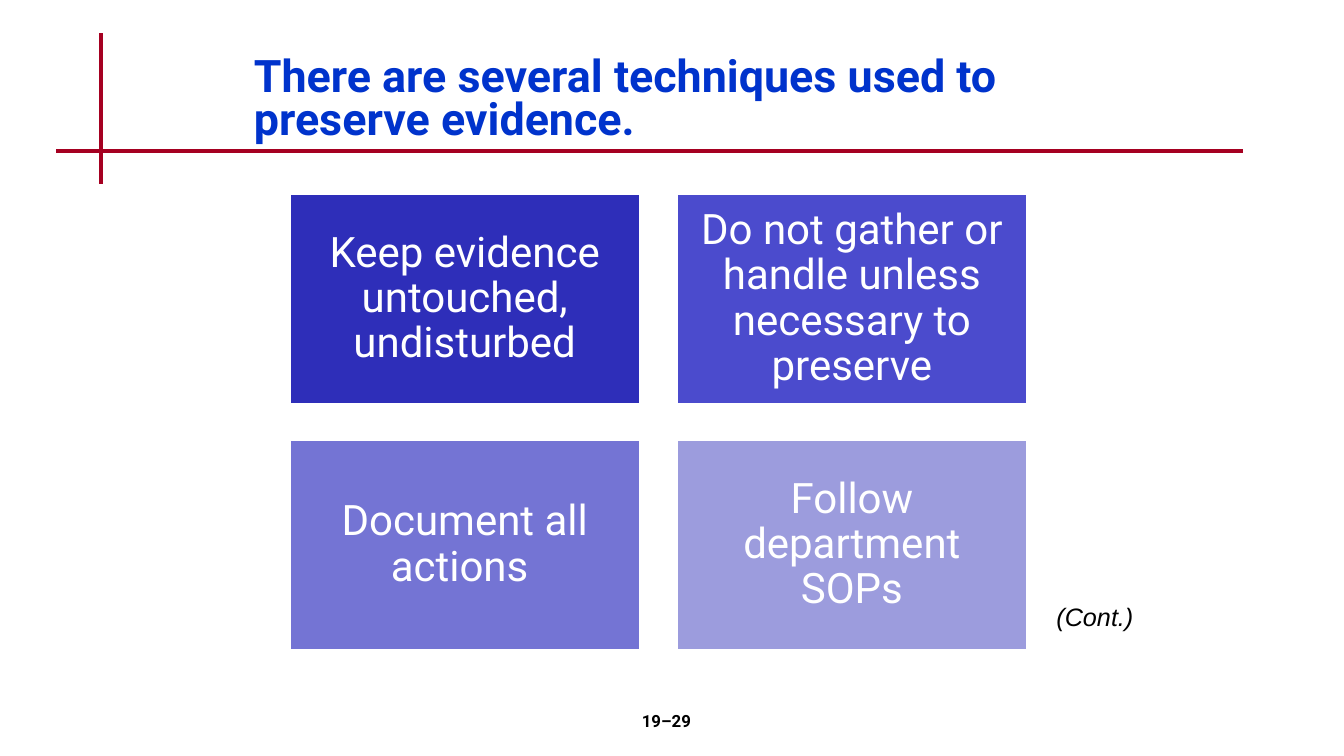
from dataclasses import dataclass

from lxml import etree
from pptx import Presentation
from pptx.dml.color import RGBColor
from pptx.enum import shapes, text
from pptx.oxml import ns
from pptx.util import Inches, Pt


@dataclass(frozen=True)
class Theme:
    heading_font: str = "Roboto"
    note_font: str = "Arial"
    title_color: str = "0033CC"
    rule_color: str = "A50021"
    ink: str = "000000"
    white: str = "FFFFFF"
    title_size: int = 32
    card_size: int = 30
    note_size: int = 18
    number_size: int = 12
    rule_width: int = 3
    card_border: int = 2


@dataclass(frozen=True)
class Box:
    left: float
    top: float
    width: float
    height: float

    def lengths(self) -> list:
        return [Inches(v) for v in (self.left, self.top, self.width, self.height)]


@dataclass(frozen=True)
class Card:
    wording: str
    fill: str


@dataclass(frozen=True)
class Rule:
    start: tuple[float, float]
    end: tuple[float, float]


THEME = Theme()
RULES = [Rule((1, 0.33), (1, 1.83)), Rule((0.56, 1.5), (12.33, 1.5))]
CARDS = [
    Card("Keep evidence untouched, undisturbed", "2E2EB9"),
    Card("Do not gather or handle unless necessary to preserve", "4B4BCD"),
    Card("Document all actions ", "7474D4"),
    Card("Follow department SOPs", "9C9CDD"),
]
FIRST_CARD = Box(2.87, 1.92, 3.48, 2.09)
COLUMNS = 2
COLUMN_STEP = 3.84
ROW_STEP = 2.44


def write(shape, wording: str, *, size: int, color: str, font: str = THEME.heading_font,
          bold: bool = False, italic: bool = False, align=text.PP_ALIGN.LEFT,
          anchor=text.MSO_ANCHOR.TOP, spacing: float = 1.0,
          inset: float | None = None) -> None:
    frame = shape.text_frame
    frame.word_wrap = True
    frame.vertical_anchor = anchor
    if inset is not None:
        frame.margin_left = frame.margin_right = Inches(inset)
        frame.margin_top = frame.margin_bottom = Inches(inset)
    paragraph = frame.paragraphs[0]
    paragraph.alignment = align
    paragraph.line_spacing = spacing
    run = paragraph.add_run()
    run.text = wording
    run.font.name = font
    run.font.size = Pt(size)
    run.font.bold = bold
    run.font.italic = italic
    run.font.color.rgb = RGBColor.from_string(color)


def draw_rule(slide, rule: Rule) -> None:
    connector = slide.shapes.add_connector(
        shapes.MSO_CONNECTOR.STRAIGHT,
        *(Inches(v) for v in (*rule.start, *rule.end)))
    connector.line.color.rgb = RGBColor.from_string(THEME.rule_color)
    connector.line.width = Pt(THEME.rule_width)
    etree.SubElement(connector.element.spPr, ns.qn("a:effectLst"))


def draw_card(slide, card: Card, box: Box) -> None:
    shape = slide.shapes.add_shape(shapes.MSO_SHAPE.RECTANGLE, *box.lengths())
    shape.shadow.inherit = False
    shape.fill.solid()
    shape.fill.fore_color.rgb = RGBColor.from_string(card.fill)
    shape.line.color.rgb = RGBColor.from_string(THEME.white)
    shape.line.width = Pt(THEME.card_border)
    write(shape, card.wording, size=THEME.card_size, color=THEME.white,
          align=text.PP_ALIGN.CENTER, anchor=text.MSO_ANCHOR.MIDDLE,
          spacing=0.9, inset=0.12)


def draw_text(slide, wording: str, box: Box, **text_format) -> None:
    write(slide.shapes.add_textbox(*box.lengths()), wording, **text_format)


def main() -> None:
    presentation = Presentation()
    presentation.slide_width = Inches(13.33)
    presentation.slide_height = Inches(7.5)
    slide = presentation.slides.add_slide(presentation.slide_layouts[6])

    for rule in RULES:
        draw_rule(slide, rule)
    draw_text(slide, "There are several techniques used to preserve evidence.",
              Box(2.42, 0.5, 9.03, 1), size=THEME.title_size, color=THEME.title_color,
              bold=True, anchor=text.MSO_ANCHOR.MIDDLE, spacing=0.8)
    draw_text(slide, "19–29", Box(5.22, 7, 2.78, 0.5), size=THEME.number_size,
              color=THEME.ink, bold=True, align=text.PP_ALIGN.CENTER)
    for index, card in enumerate(CARDS):
        row, column = divmod(index, COLUMNS)
        draw_card(slide, card, Box(FIRST_CARD.left + column * COLUMN_STEP,
                                   FIRST_CARD.top + row * ROW_STEP,
                                   FIRST_CARD.width, FIRST_CARD.height))
    draw_text(slide, "(Cont.)", Box(9.67, 5.92, 1.67, 0.4), size=THEME.note_size,
              color=THEME.ink, font=THEME.note_font, italic=True,
              align=text.PP_ALIGN.RIGHT)

    presentation.save("out.pptx")


if __name__ == "__main__":
    main()
